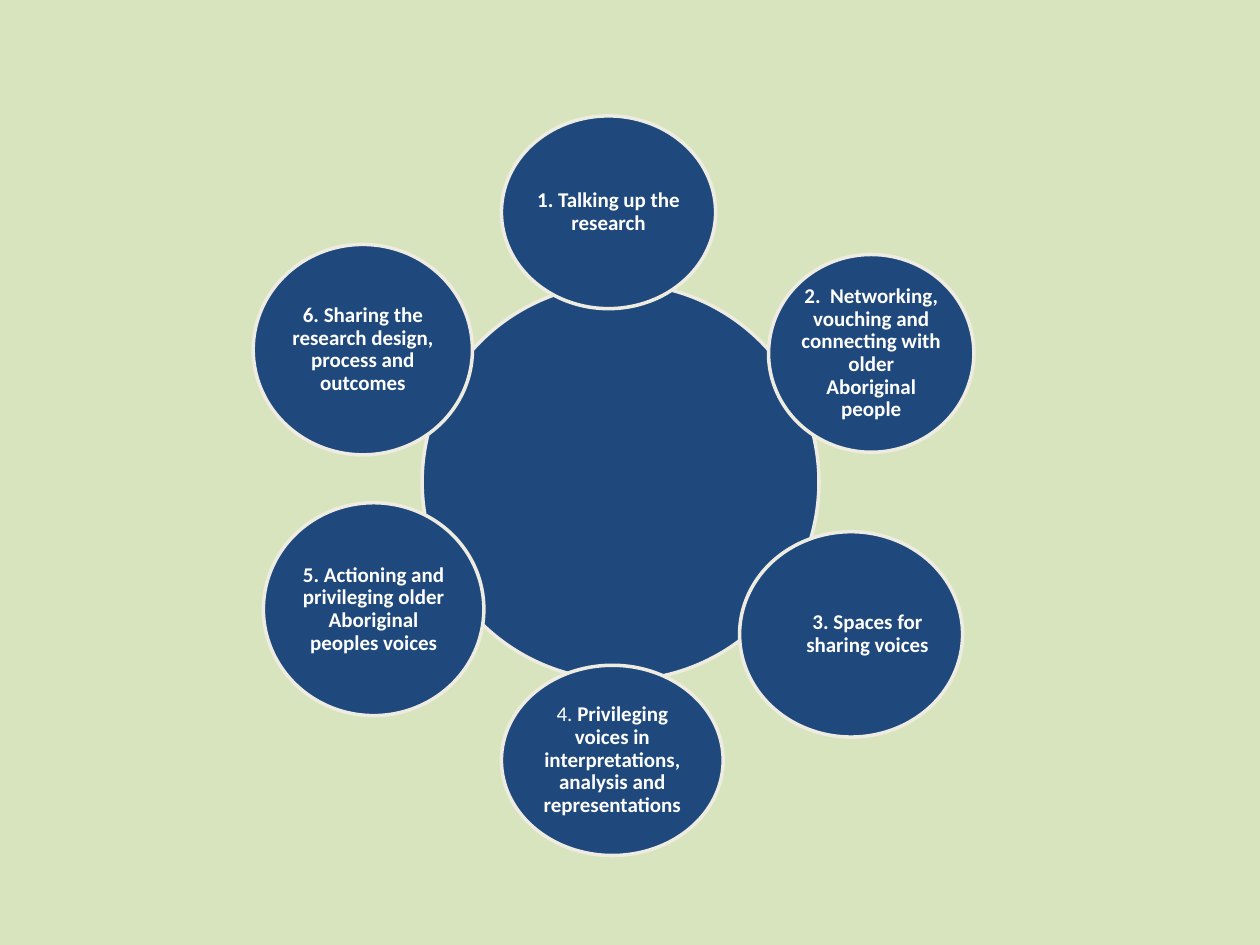
from math import sqrt

from pptx import Presentation
from pptx.dml.color import RGBColor
from pptx.enum.shapes import MSO_SHAPE
from pptx.enum.text import MSO_ANCHOR, PP_ALIGN
from pptx.util import Inches, Pt

SLIDE_WIDTH, SLIDE_HEIGHT = Inches(10), Inches(7.5)
PALE_GREEN = RGBColor(0xD7, 0xE4, 0xBD)
NAVY = RGBColor(0x1F, 0x49, 0x7D)
CREAM = RGBColor(0xEE, 0xEC, 0xE1)
WHITE = RGBColor(0xFF, 0xFF, 0xFF)
FONT = "Calibri"

# Left, top, width and height in percent of the slide's size.
HUB = (33.5, 30, 31.5, 42)
# Area, plain lead, bold wording, sideways shift of the wording.
STEPS = [
    ((39.8, 12.27, 17, 20.4), "", "1. Talking up the research", 0),
    ((61, 26.93, 16.3, 20.93), "",
     "2.  Networking, vouching and connecting with older Aboriginal people", 0),
    ((58.7, 56.27, 17.7, 21.73), "", "3. Spaces for sharing voices", 1.3),
    ((39.8, 70.4, 17.6, 20.13), "4. ",
     "Privileging voices in interpretations, analysis and representations", 0),
    ((20.9, 53.2, 17.5, 22.53), "",
     "5. Actioning and privileging older Aboriginal peoples voices", 0),
    ((20.1, 25.87, 17.4, 22.27), "",
     "6. Sharing the research design, process and outcomes", 0),
]


def place(area):
    """Turn percentages of the slide into lengths."""
    left, top, width, height = area
    return (int(SLIDE_WIDTH * left / 100), int(SLIDE_HEIGHT * top / 100),
            int(SLIDE_WIDTH * width / 100), int(SLIDE_HEIGHT * height / 100))


def inscribed(area, shift):
    """Return the largest rectangle inside an ellipse, moved sideways."""
    left, top, width, height = area
    margin = (1 - 1 / sqrt(2)) / 2
    return (left + width * margin + shift, top + height * margin,
            width / sqrt(2), height / sqrt(2))


def add_circle(shapes, area):
    circle = shapes.add_shape(MSO_SHAPE.OVAL, *place(area))
    circle.shadow.inherit = False
    circle.fill.solid()
    circle.fill.fore_color.rgb = NAVY
    circle.line.color.rgb = CREAM
    circle.line.width = Pt(2)


def add_wording(shapes, area, lead, wording):
    frame = shapes.add_textbox(*place(area)).text_frame
    frame.word_wrap = True
    frame.vertical_anchor = MSO_ANCHOR.MIDDLE
    frame.margin_left = frame.margin_right = Inches(0.02)
    frame.margin_top = frame.margin_bottom = Inches(0.02)
    paragraph = frame.paragraphs[0]
    paragraph.alignment = PP_ALIGN.CENTER
    paragraph.line_spacing = 0.9
    for text, bold in ((lead, False), (wording, True)):
        if text:
            run = paragraph.add_run()
            run.text = text
            run.font.name = FONT
            run.font.size = Pt(12)
            run.font.bold = bold
            run.font.color.rgb = WHITE


def add_step(slide, area, lead, wording, shift):
    step = slide.shapes.add_group_shape()
    add_circle(step.shapes, area)
    add_wording(step.shapes, inscribed(area, shift), lead, wording)


def main():
    deck = Presentation()
    deck.slide_width, deck.slide_height = SLIDE_WIDTH, SLIDE_HEIGHT
    slide = deck.slides.add_slide(deck.slide_layouts[6])
    slide.background.fill.solid()
    slide.background.fill.fore_color.rgb = PALE_GREEN
    add_circle(slide.shapes, HUB)
    for step in STEPS:
        add_step(slide, *step)
    deck.save("out.pptx")


if __name__ == "__main__":
    main()
